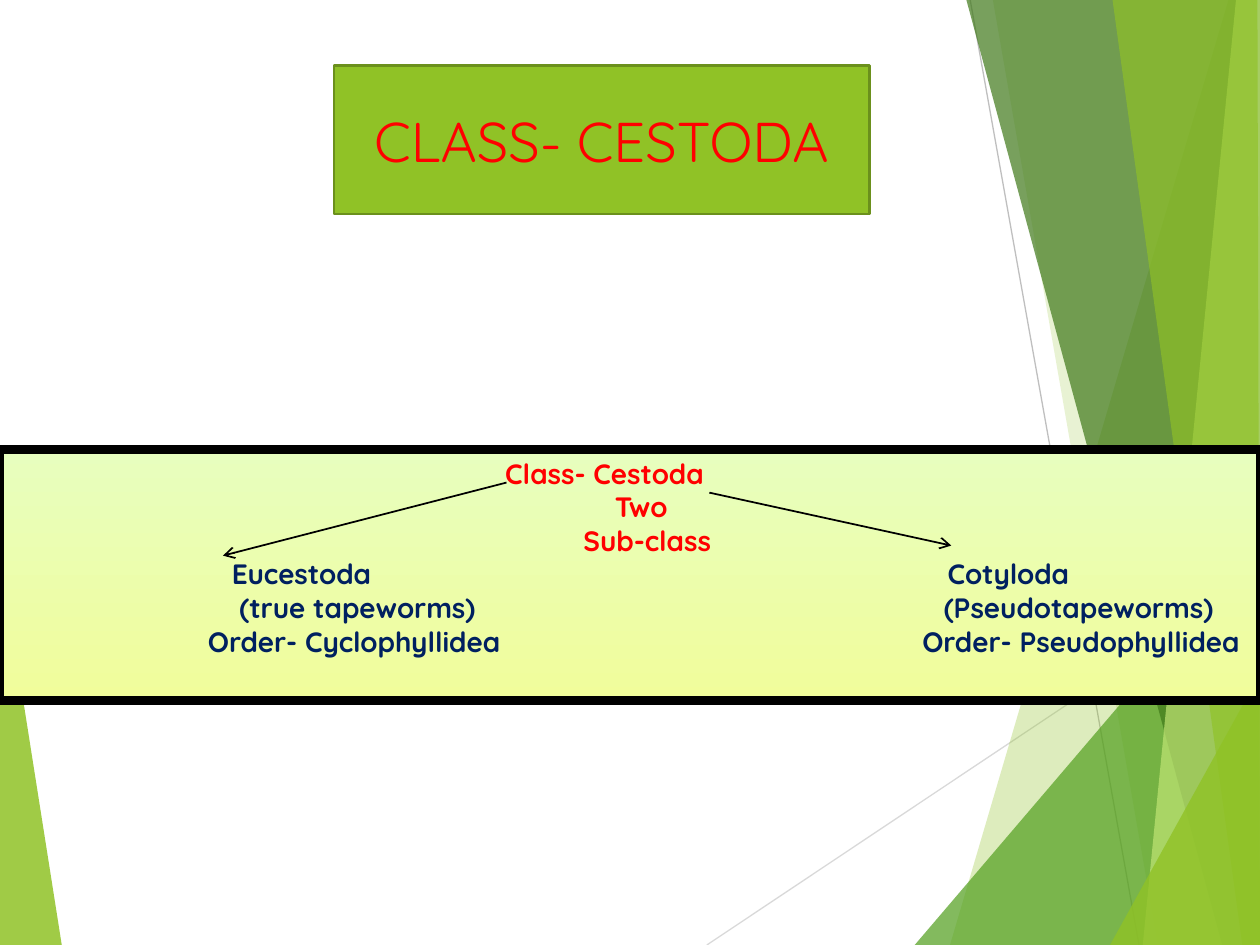
from lxml import etree
from pptx import Presentation
from pptx import util as u
from pptx.dml.color import RGBColor
from pptx.enum import shapes, text
from pptx.oxml import ns

FONT = "Quicksand"
RED = RGBColor(0xFF, 0x00, 0x00)
NAVY = RGBColor(0x00, 0x20, 0x60)
BLACK = RGBColor(0x00, 0x00, 0x00)
LIME = RGBColor(0x90, 0xC2, 0x26)
OLIVE = RGBColor(0x6B, 0x90, 0x1C)
GREEN = RGBColor(0x54, 0xA0, 0x21)
DARK = RGBColor(0x3F, 0x78, 0x19)
PALE = RGBColor(0xC0, 0xE4, 0x74)
MINT = RGBColor(0xE7, 0xFE, 0xBE)
CREAM = RGBColor(0xF1, 0xFD, 0x9B)
SILVER = RGBColor(0xD9, 0xD9, 0xD9)
GREY = RGBColor(0xBF, 0xBF, 0xBF)

# Colour, opacity in percent, corners
SHARDS = [
    (LIME, 85, [(0, 4.39), (0.49, 7.5), (0, 7.5)]),
    (LIME, 30, [(9.75, 0), (7.54, 7.5), (10, 7.5), (10, 0)]),
    (LIME, 20, [(7.88, 0), (9.19, 7.5), (10, 7.5), (10, 0)]),
    (GREEN, 72, [(7.26, 7.5), (10, 4.29), (10, 7.5)]),
    (DARK, 70, [(7.67, 0), (9.7, 7.5), (10, 7.5), (10, 0)]),
    (PALE, 70, [(9.81, 0), (9.07, 7.5), (10, 7.5), (10, 0)]),
    (LIME, 65, [(8.83, 0), (9.86, 7.5), (10, 7.5), (9.98, 0)]),
    (LIME, 80, [(8.81, 7.5), (10, 5.35), (10, 7.5)]),
]

# Colour, then the start and wording of each piece on the line
ROWS = [
    (RED, [(4.01, "Class- Cestoda")]),
    (RED, [(4.88, "Two")]),
    (RED, [(4.63, "Sub-class")]),
    (NAVY, [(1.84, "Eucestoda"), (7.52, "Cotyloda")]),
    (NAVY, [(1.9, "(true tapeworms)"), (7.49, "(Pseudotapeworms)")]),
    (NAVY, [(1.65, "Order- Cyclophyllidea"), (7.32, "Order- Pseudophyllidea")]),
]


def write(para, words, size=16, color=BLACK, bold=False, align=text.PP_ALIGN.LEFT):
    para.alignment = align
    run = para.add_run()
    run.text = words
    font = run.font
    font.name, font.size, font.bold = FONT, u.Pt(size), bold
    font.color.rgb = color


def set_tabs(para, stops):
    tabs = etree.SubElement(para._p.get_or_add_pPr(), ns.qn("a:tabLst"))
    for stop in stops:
        etree.SubElement(tabs, ns.qn("a:tab"), pos=str(u.Inches(stop)), algn="l")


class Deck:
    def __init__(self):
        self.prs = Presentation()
        self.prs.slide_width, self.prs.slide_height = u.Inches(10), u.Inches(7.5)
        self.slide = self.prs.slides.add_slide(self.prs.slide_layouts[5])
        self.items = self.slide.shapes

    def shard(self, color, alpha, points):
        (x, y), *rest = points
        pen = self.items.build_freeform(u.Inches(x), u.Inches(y))
        pen.add_line_segments([(u.Inches(a), u.Inches(b)) for a, b in rest])
        shape = pen.convert_to_shape()
        shape.shadow.inherit = False
        shape.line.fill.background()
        shape.fill.solid()
        shape.fill.fore_color.rgb = color
        tint = shape._element.spPr.find(".//" + ns.qn("a:srgbClr"))
        etree.SubElement(tint, ns.qn("a:alpha"), val=str(alpha * 1000))

    def line(self, start, end, color=BLACK, width=1, arrow=False):
        ends = [u.Inches(v) for v in (*start, *end)]
        link = self.items.add_connector(shapes.MSO_CONNECTOR.STRAIGHT, *ends)
        link.line.color.rgb = color
        link.line.width = u.Pt(width)
        if arrow:
            etree.SubElement(link.line._get_or_add_ln(), ns.qn("a:tailEnd"), type="arrow")
        etree.SubElement(link._element.spPr, ns.qn("a:effectLst"))

    def panel(self, box, rows):
        """Place the title placeholder as a gradient band of tabbed lines."""
        title = self.items.title
        self.items._spTree.append(title._element)  # in front of the shards
        title.left, title.top, title.width, title.height = map(u.Inches, box)
        title.fill.gradient()
        title.fill.gradient_angle = 270
        for stop, color in zip(title.fill.gradient_stops, (MINT, CREAM)):
            stop.color.rgb = color
        title.line.color.rgb = BLACK
        title.line.width = u.Pt(5)
        frame = title.text_frame
        frame.auto_size = text.MSO_AUTO_SIZE.NONE
        frame.vertical_anchor = text.MSO_ANCHOR.TOP
        frame.margin_left = frame.margin_right = 0
        for i, (color, parts) in enumerate(rows):
            para = frame.add_paragraph() if i else frame.paragraphs[0]
            para.line_spacing = u.Pt(19.2)
            para.space_before = u.Pt(0)
            set_tabs(para, [x for x, _ in parts])
            write(para, "".join("\t" + words for _, words in parts), color=color, bold=True)

    def box(self, place, words):
        shape = self.items.add_shape(shapes.MSO_SHAPE.RECTANGLE, *map(u.Inches, place))
        shape.shadow.inherit = False
        shape.fill.solid()
        shape.fill.fore_color.rgb = LIME
        shape.line.color.rgb = OLIVE
        shape.line.width = u.Pt(1.5)
        frame = shape.text_frame
        frame.word_wrap = True
        frame.vertical_anchor = text.MSO_ANCHOR.MIDDLE
        write(frame.paragraphs[0], words, size=32, color=RED, align=text.PP_ALIGN.CENTER)


def main():
    deck = Deck()
    deck.line((5.61, 7.5), (10, 4.57), SILVER, 0.75)
    deck.line((7.7, 0), (9.04, 7.5), GREY, 0.75)
    for shard in SHARDS:
        deck.shard(*shard)
    deck.panel((0, 3.57, 10, 1.99), ROWS)
    deck.line((4.02, 3.83), (1.77, 4.41), arrow=True)
    deck.line((5.63, 3.91), (7.55, 4.33), arrow=True)
    deck.box((2.65, 0.52, 4.25, 1.18), "CLASS- CESTODA")
    deck.prs.save("out.pptx")


if __name__ == "__main__":
    main()
